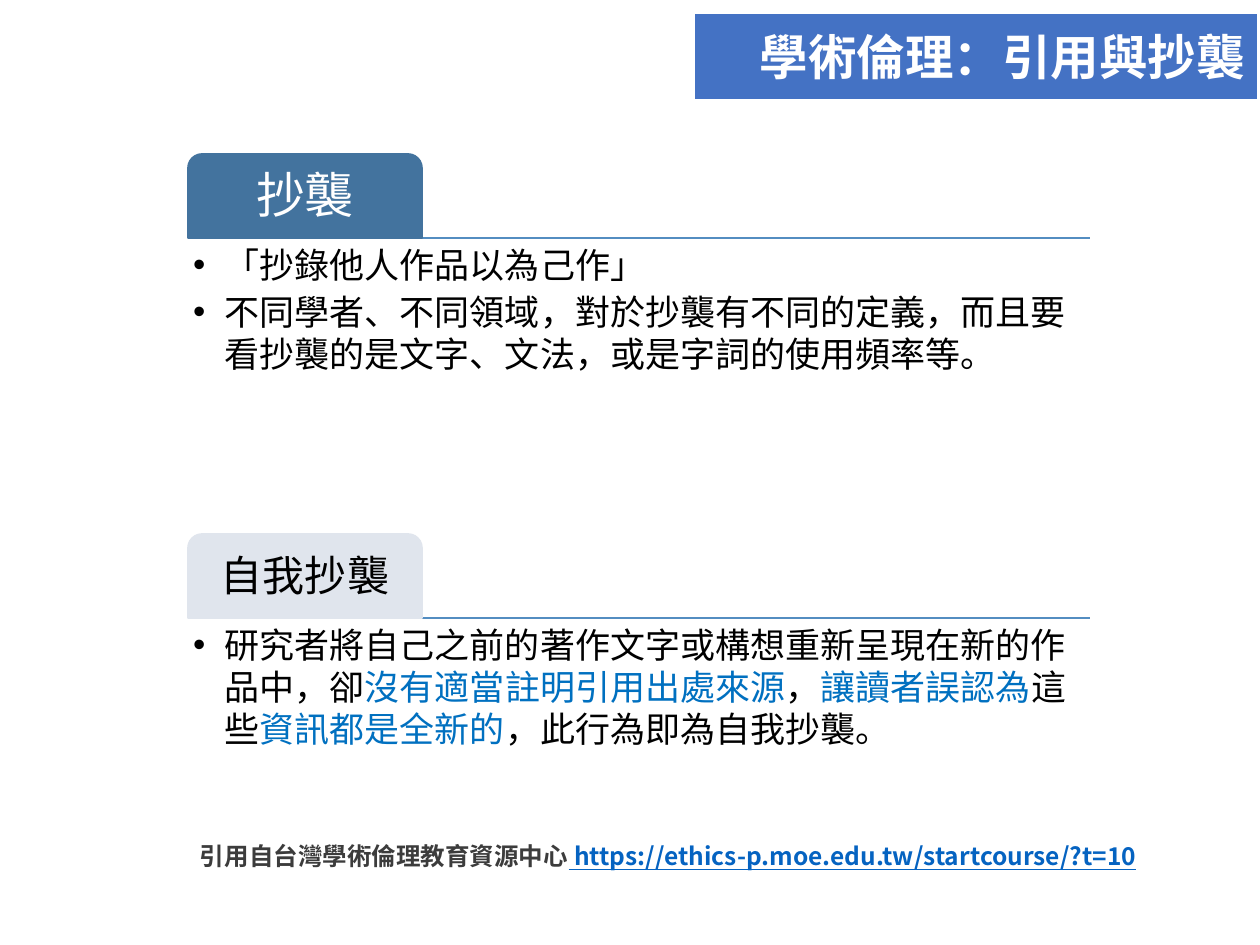
from lxml import etree
from pptx import Presentation
from pptx import util as u
from pptx.dml.color import RGBColor
from pptx.enum import shapes, text
from pptx.oxml.ns import qn

WHITE = RGBColor(0xFF, 0xFF, 0xFF)
BLACK = RGBColor(0, 0, 0)
BANNER = RGBColor(0x44, 0x72, 0xC4)
RULE = RGBColor(0x53, 0x8D, 0xC1)
STEEL = RGBColor(0x43, 0x73, 0x9E)
PALE = RGBColor(0xE0, 0xE5, 0xED)
ACCENT = RGBColor(0x00, 0x70, 0xC0)
GREY = RGBColor(0x3C, 0x3C, 0x3C)
LINK = RGBColor(0x05, 0x63, 0xC1)

FONT = "Noto Sans CJK SC"
PX = u.Inches(1) // 126
LEFT, RULE_WIDTH = 188, 902
TAB_WIDTH, TAB_HEIGHT = 234, 84
FIRST_TOP, SECTION_PITCH = 154, 380

# Each section: tab label, tab size, tab fill, label colour, bullets made of (text, colour)
SECTIONS = [
    ("抄襲", 28, STEEL, WHITE, [
        [("「抄錄他人作品以為己作」", BLACK)],
        [("不同學者、不同領域，對於抄襲有不同的定義，而且要看抄襲的是文字、文法，"
          "或是字詞的使用頻率等。", BLACK)],
    ]),
    ("自我抄襲", 24, PALE, BLACK, [
        [("研究者將自己之前的著作文字或構想重新呈現在新的作品中，卻", BLACK),
         ("沒有適當註明引用出處來源", ACCENT), ("，", BLACK),
         ("讓讀者誤認為", ACCENT), ("這些", BLACK),
         ("資訊都是全新的", ACCENT), ("，此行為即為自我抄襲。", BLACK)],
    ]),
]


class SlideWriter:
    def __init__(self, page):
        self.page = page

    def place(self, shape, left, top, width, height):
        shape.left, shape.top = left * PX, top * PX
        shape.width, shape.height = width * PX, height * PX

    def frame(self, shape, anchor, inset):
        frame = shape.text_frame
        frame.word_wrap = True
        frame.auto_size = text.MSO_AUTO_SIZE.NONE
        frame.vertical_anchor = anchor
        frame.margin_left = frame.margin_right = inset * PX
        frame.margin_top = frame.margin_bottom = min(inset, 6) * PX
        return frame

    def span(self, para, words, size, color, bold=False, underline=None):
        span = para.add_run()
        span.text = words
        font = span.font
        font.name, font.size, font.bold = FONT, u.Pt(size), bold
        font.underline = underline
        font.color.rgb = color
        east_asian = etree.Element(qn("a:ea"), typeface=FONT)
        span._r.rPr.find(qn("a:latin")).addnext(east_asian)

    def paint(self, shape, fill, line):
        shape.fill.solid()
        shape.fill.fore_color.rgb = fill
        shape.line.color.rgb = line
        shape.line.width = u.Pt(1)

    def banner(self, words, left, top, width, height):
        title = self.page.shapes.title
        self.place(title, left, top, width, height)
        self.paint(title, BANNER, WHITE)
        para = self.frame(title, text.MSO_ANCHOR.MIDDLE, 13).paragraphs[0]
        para.alignment = text.PP_ALIGN.RIGHT
        self.span(para, words, 27.7, WHITE, bold=True)

    def rule(self, left, y, width):
        line = self.page.shapes.add_connector(
            shapes.MSO_CONNECTOR.STRAIGHT, left * PX, y * PX, (left + width) * PX, y * PX)
        line.line.color.rgb = RULE
        line.line.width = u.Pt(1)
        etree.SubElement(line._element.spPr, qn("a:effectLst"))

    def tab(self, label, size, fill, color, left, top):
        tab = self.page.shapes.add_shape(
            shapes.MSO_SHAPE.ROUND_2_SAME_RECTANGLE, left * PX, top * PX,
            TAB_WIDTH * PX, TAB_HEIGHT * PX)
        tab.shadow.inherit = False
        self.paint(tab, fill, fill)
        para = self.frame(tab, text.MSO_ANCHOR.MIDDLE, 13).paragraphs[0]
        para.alignment = text.PP_ALIGN.CENTER
        para.line_spacing = 0.9
        self.span(para, label, size, color)

    def bullets(self, body, items, left, top, width, height):
        self.place(body, left, top, width, height)
        frame = self.frame(body, text.MSO_ANCHOR.TOP, 5)
        for index, spans in enumerate(items):
            para = frame.add_paragraph() if index else frame.paragraphs[0]
            para.level = 1
            para.space_before, para.space_after = u.Pt(0), u.Pt(3)
            props = para._p.get_or_add_pPr()
            props.set("marL", str(u.Inches(0.25)))
            props.set("indent", str(-u.Inches(0.25)))
            etree.SubElement(props, qn("a:buFont"), typeface="Arial")
            etree.SubElement(props, qn("a:buChar"), char="•")
            for words, color in spans:
                self.span(para, words, 20, color)

    def source(self, label, address, left, top, width, height):
        box = self.page.shapes.add_textbox(left * PX, top * PX, width * PX, height * PX)
        para = self.frame(box, text.MSO_ANCHOR.TOP, 12).paragraphs[0]
        self.span(para, label, 14, GREY, bold=True)
        self.span(para, address, 14, LINK, bold=True, underline=True)


def main():
    deck = Presentation()
    deck.slide_width, deck.slide_height = u.Inches(10), u.Inches(7.5)
    page = deck.slides.add_slide(deck.slide_layouts.get_by_name("Two Content"))
    writer = SlideWriter(page)

    writer.banner("學術倫理：引用與抄襲", 694, 13, 564, 87)
    bodies = [holder for holder in page.placeholders if holder.placeholder_format.idx in (1, 2)]
    for index, (label, size, fill, color, items) in enumerate(SECTIONS):
        top = FIRST_TOP + index * SECTION_PITCH
        base = top + TAB_HEIGHT
        writer.rule(LEFT, base, RULE_WIDTH)
        writer.tab(label, size, fill, color, LEFT, top)
        writer.bullets(bodies[index], items, LEFT, base, RULE_WIDTH, 249)
    writer.source("引用自台灣學術倫理教育資源中心",
                  " https://ethics-p.moe.edu.tw/startcourse/?t=10", LEFT, 835, 963, 43)

    deck.save("out.pptx")


if __name__ == "__main__":
    main()
